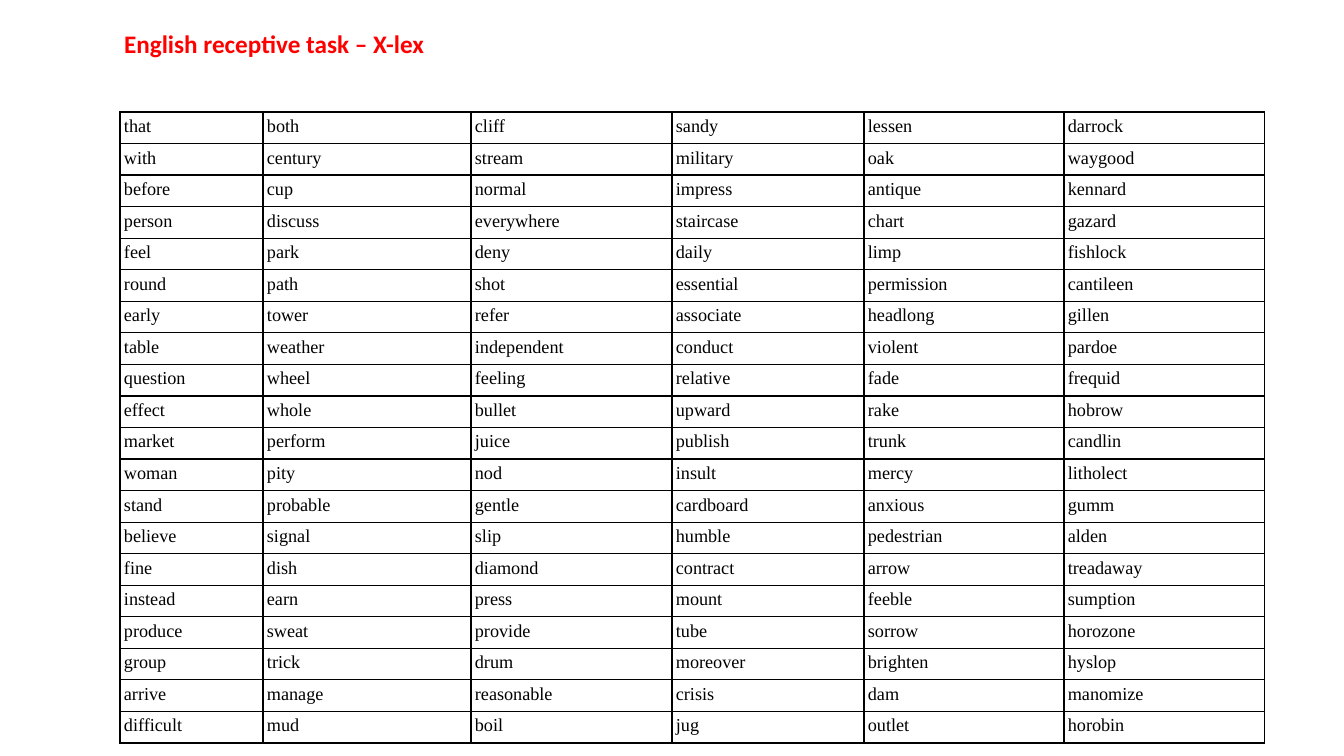
from lxml.etree import SubElement
from pptx import Presentation
from pptx.dml.color import RGBColor
from pptx.enum.text import MSO_ANCHOR as Anchor, PP_ALIGN as Align
from pptx.oxml.ns import qn
from pptx.util import Pt

PX = 914400 / 100.8
SLIDE_SIZE = (1344, 756)
TITLE_BOX = (114, 23, 625, 40)
TABLE_BOX = (120, 112, 1145, 631)
COLUMN_WIDTHS = (143, 208, 201, 192, 200, 201)
BLACK, RED = "000000", "FF0000"

WORD_ROWS = [
    ("that", "both", "cliff", "sandy", "lessen", "darrock"),
    ("with", "century", "stream", "military", "oak", "waygood"),
    ("before", "cup", "normal", "impress", "antique", "kennard"),
    ("person", "discuss", "everywhere", "staircase", "chart", "gazard"),
    ("feel", "park", "deny", "daily", "limp", "fishlock"),
    ("round", "path", "shot", "essential", "permission", "cantileen"),
    ("early", "tower", "refer", "associate", "headlong", "gillen"),
    ("table", "weather", "independent", "conduct", "violent", "pardoe"),
    ("question", "wheel", "feeling", "relative", "fade", "frequid"),
    ("effect", "whole", "bullet", "upward", "rake", "hobrow"),
    ("market", "perform", "juice", "publish", "trunk", "candlin"),
    ("woman", "pity", "nod", "insult", "mercy", "litholect"),
    ("stand", "probable", "gentle", "cardboard", "anxious", "gumm"),
    ("believe", "signal", "slip", "humble", "pedestrian", "alden"),
    ("fine", "dish", "diamond", "contract", "arrow", "treadaway"),
    ("instead", "earn", "press", "mount", "feeble", "sumption"),
    ("produce", "sweat", "provide", "tube", "sorrow", "horozone"),
    ("group", "trick", "drum", "moreover", "brighten", "hyslop"),
    ("arrive", "manage", "reasonable", "crisis", "dam", "manomize"),
    ("difficult", "mud", "boil", "jug", "outlet", "horobin"),
]


def px(length):
    return round(length * PX)


def color(code):
    return RGBColor.from_string(code)


def write_text(text_frame, text, font, size, fill, bold=False, spacing=1.0):
    paragraph = text_frame.paragraphs[0]
    paragraph.alignment = Align.LEFT
    paragraph.line_spacing = spacing
    run = paragraph.add_run()
    run.text = text
    run.font.name = font
    run.font.size = Pt(size)
    run.font.bold = bold
    run.font.color.rgb = color(fill)


def add_borders(cell, code, width):
    properties = cell._tc.get_or_add_tcPr()
    for side in ("a:lnL", "a:lnR", "a:lnT", "a:lnB"):
        line = SubElement(properties, qn(side), w=str(Pt(width)))
        fill = SubElement(line, qn("a:solidFill"))
        SubElement(fill, qn("a:srgbClr"), val=code)


def place_title(slide, box):
    title = slide.shapes.title
    title.left, title.top, title.width, title.height = map(px, box)
    title.text_frame.word_wrap = True
    title.text_frame.vertical_anchor = Anchor.TOP
    write_text(title.text_frame, "English receptive task – X-lex",
               font="Calibri", size=18, fill=RED, bold=True)


def add_word_table(slide, box):
    frame = slide.shapes.add_table(len(WORD_ROWS), len(COLUMN_WIDTHS), *map(px, box))
    table = frame.table
    table.first_row = False
    table.horz_banding = False
    for column, width in zip(table.columns, COLUMN_WIDTHS):
        column.width = px(width)
    for row, words in zip(table.rows, WORD_ROWS):
        for cell, word in zip(row.cells, words):
            cell.margin_left = cell.margin_right = px(4)
            cell.margin_top = cell.margin_bottom = px(3)
            add_borders(cell, BLACK, width=1)
            cell.fill.background()
            write_text(cell.text_frame, word, font="Times New Roman",
                       size=13, fill=BLACK, spacing=1.07)


def main():
    presentation = Presentation()
    presentation.slide_width, presentation.slide_height = map(px, SLIDE_SIZE)
    slide = presentation.slides.add_slide(presentation.slide_layouts[5])
    place_title(slide, TITLE_BOX)
    add_word_table(slide, TABLE_BOX)
    presentation.save("out.pptx")


if __name__ == "__main__":
    main()
